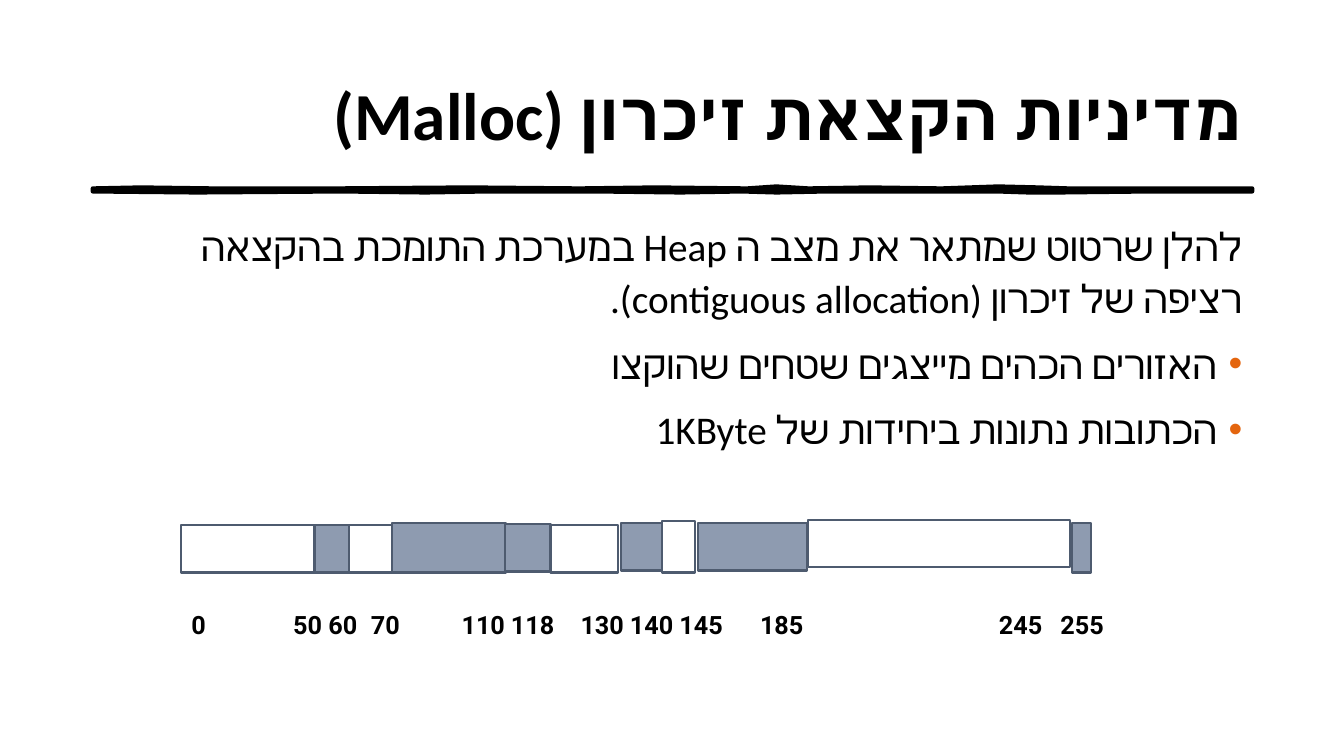
from lxml import etree
from pptx import Presentation
from pptx import util as u
from pptx.dml.color import RGBColor
from pptx.enum import shapes, text
from pptx.oxml.ns import qn

PX = 9144
BLACK, WHITE, SLATE, USED, ORANGE = "000000", "FFFFFF", "4E5B6F", "8E9BB0", "E4650E"


def rgb(value):
    """Turn a hex string into a colour."""
    return RGBColor.from_string(value)


class Deck:
    """Hold the style and the current slide, and draw each kind of element."""

    def __init__(self, width, height):
        """Start a presentation with one blank slide."""
        self.prs = Presentation()
        self.prs.slide_width, self.prs.slide_height = width * PX, height * PX
        self.slide = self.prs.slides.add_slide(self.prs.slide_layouts[6])

    def paint(self, sp, fill, line, weight):
        """Set fill, outline and no shadow on a shape."""
        sp.shadow.inherit = False
        sp.fill.solid()
        sp.fill.fore_color.rgb = rgb(fill)
        sp.line.color.rgb = rgb(line)
        sp.line.width = u.Pt(weight)

    def rect(self, x, y, w, h, fill):
        """Draw an outlined block."""
        sp = self.slide.shapes.add_shape(
            shapes.MSO_SHAPE.RECTANGLE, x * PX, y * PX, w * PX, h * PX)
        self.paint(sp, fill, SLATE, 1.5)

    def stroke(self, points):
        """Draw a closed black outline through the points."""
        fb = self.slide.shapes.build_freeform(*points[0], scale=PX)
        fb.add_line_segments(points[1:], close=True)
        self.paint(fb.convert_to_shape(), BLACK, BLACK, 3)

    def box(self, x, y, w, h, anchor=text.MSO_ANCHOR.TOP):
        """Add a wrapping text box."""
        sp = self.slide.shapes.add_textbox(x * PX, y * PX, w * PX, h * PX)
        sp.text_frame.word_wrap = True
        sp.text_frame.vertical_anchor = anchor
        return sp

    def label(self, p, words, size, font="Calibri", bold=False, rtl=True):
        """Fill a paragraph and set its font and direction."""
        p.text = words
        p.font.size, p.font.bold, p.font.name = u.Pt(size), bold, font
        p.font.color.rgb = rgb(BLACK)
        pPr = p._p.get_or_add_pPr()
        etree.SubElement(pPr.find(qn("a:defRPr")), qn("a:cs"), typeface=font)
        if rtl:
            p.alignment = text.PP_ALIGN.RIGHT
            pPr.set("rtl", "1")

    def add_property(self, p, tag, **attrs):
        """Add a paragraph property ahead of the font."""
        el = etree.Element(qn(tag), **attrs)
        p._p.pPr.find(qn("a:defRPr")).addprevious(el)
        return el

    def bullet(self, p, indent):
        """Give a paragraph an orange bullet."""
        p._p.pPr.set("marR", "0")
        p._p.pPr.set("marL", str(indent * PX))
        p._p.pPr.set("indent", str(-indent * PX))
        etree.SubElement(self.add_property(p, "a:buClr"), qn("a:srgbClr"), val=ORANGE)
        self.add_property(p, "a:buFont", typeface="Arial")
        self.add_property(p, "a:buChar", char="•")

    def tabs(self, p, stops):
        """Set left tab stops."""
        tab_list = self.add_property(p, "a:tabLst")
        for stop in stops:
            etree.SubElement(tab_list, qn("a:tab"), pos=str(stop * PX), algn="l")


BODY = [
    ("להלן שרטוט שמתאר את מצב ה Heap במערכת התומכת בהקצאה רציפה של זיכרון (contiguous allocation).", False),
    ("האזורים הכהים מייצגים שטחים שהוקצו", True),
    ("הכתובות נתונות ביחידות של 1KByte", True),
]
RULE_TOP = [(92, 187), (140, 186), (212, 187), (333, 187), (465, 186), (575, 187),
            (650, 186), (741, 187), (770, 185), (802, 187), (862, 186), (934, 187),
            (990, 185), (1030, 186), (1060, 187), (1242, 187)]
RULE_BOTTOM = [(1242, 190), (1140, 190), (1050, 191), (1020, 191), (989, 190), (917, 190),
               (820, 190), (770, 191), (736, 190), (675, 191), (592, 190), (483, 190),
               (422, 191), (339, 190), (195, 191), (92, 190)]
BLOCKS = [
    (180, 521, 133, 47, WHITE), (312, 521, 34, 47, USED), (346, 521, 48, 47, WHITE),
    (389, 519, 113, 49, USED), (501, 520, 45, 47, USED), (546, 521, 67, 47, WHITE),
    (616, 519, 52, 47, USED), (657, 517, 32, 51, WHITE), (692, 519, 108, 47, USED),
    (801, 516, 260, 47, WHITE), (1063, 519, 19, 49, USED),
]
ADDRESSES = [0, 50, 60, 70, 110, 118, 130, 140, 145, 185, 245, 255]
ADDRESS_STOPS = [101, 136, 178, 268, 317, 386, 435, 484, 564, 801, 862]


def main():
    """Build the heap allocation slide."""
    deck = Deck(1333, 750)
    deck.stroke(RULE_TOP + RULE_BOTTOM)

    title = deck.box(92, 40, 1150, 145, text.MSO_ANCHOR.MIDDLE)
    deck.label(title.text_frame.paragraphs[0], "מדיניות הקצאת זיכרון (Malloc)", 48, bold=True)

    tf = deck.box(92, 211, 1150, 465).text_frame
    for i, (words, bulleted) in enumerate(BODY):
        p = tf.add_paragraph() if i else tf.paragraphs[0]
        deck.label(p, words, 28)
        p.line_spacing, p.space_before = 1.1, u.Pt(10)
        if bulleted:
            deck.bullet(p, 25)

    for block in BLOCKS:
        deck.rect(*block)

    axis = deck.box(180, 600, 977, 40)
    axis.line.color.rgb = rgb(WHITE)
    axis.line.width = u.Pt(0.75)
    p = axis.text_frame.paragraphs[0]
    deck.label(p, "\t".join(map(str, ADDRESSES)), 18, "Roboto", bold=True, rtl=False)
    deck.tabs(p, ADDRESS_STOPS)

    deck.prs.save("out.pptx")


if __name__ == "__main__":
    main()
